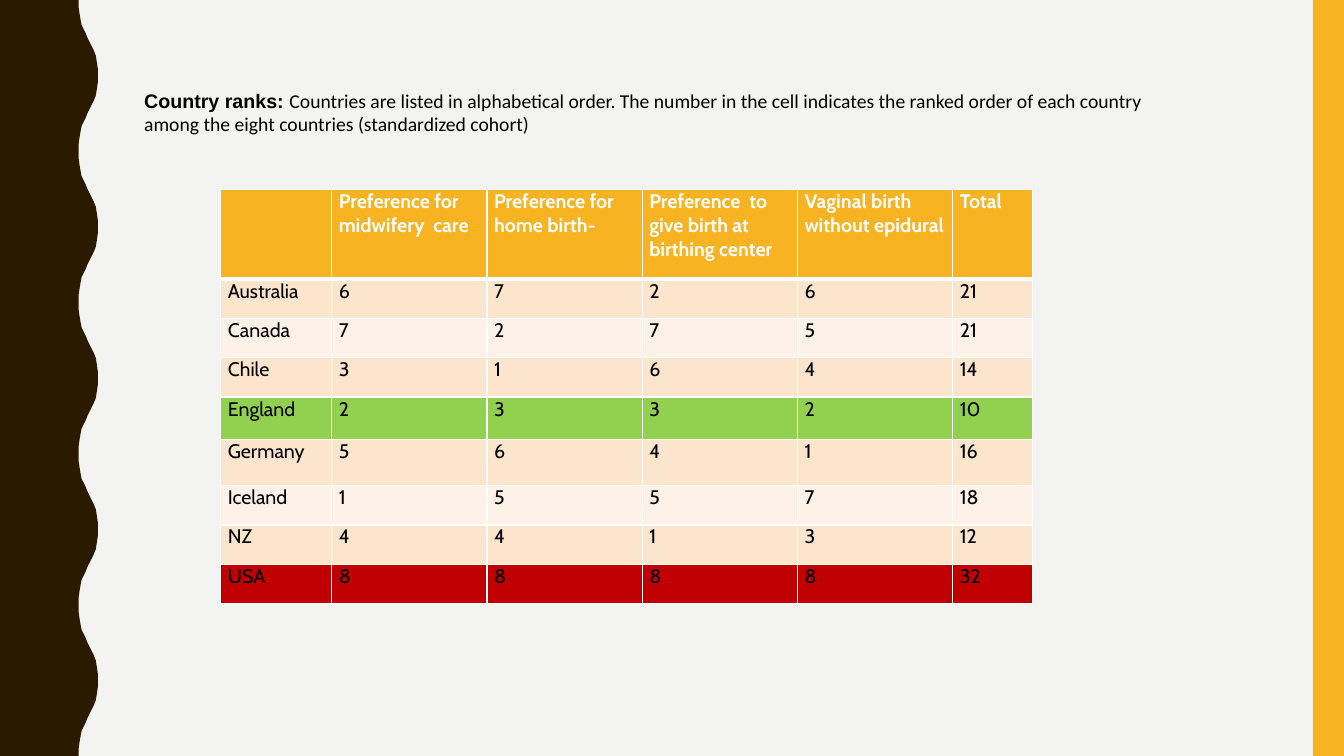
import dataclasses

import pptx
import pptx.dml.color
import pptx.enum.shapes
import pptx.enum.text
import pptx.oxml
import pptx.oxml.ns
import pptx.util

Inches = pptx.util.Inches


@dataclasses.dataclass(frozen=True)
class Theme:
    background: str = "F3F3F2"
    wave: str = "2A1A00"
    accent: str = "F8B323"
    band_dark: str = "FCE5CD"
    band_light: str = "FEF2E8"
    best: str = "92D050"
    worst: str = "C00000"
    text: str = "000000"
    white: str = "FFFFFF"
    text_size: int = 14
    table_font: str = "Cabin"
    lead_font: str = "Arial"
    caption_font: str = "Calibri"


theme = Theme()


def paint(fill, color):
    fill.solid()
    fill.fore_color.rgb = pptx.dml.color.RGBColor.from_string(color)


def add_border(cell, side, width):
    namespace = pptx.oxml.ns.nsdecls("a")
    cell._tc.get_or_add_tcPr().append(pptx.oxml.parse_xml(
        f'<a:ln{side} {namespace} w="{pptx.util.Pt(width)}"><a:solidFill>'
        f'<a:srgbClr val="{theme.white}"/></a:solidFill></a:ln{side}>'))


presentation = pptx.Presentation()
presentation.slide_width = Inches(13.33)
presentation.slide_height = Inches(7.5)
slide = presentation.slides.add_slide(presentation.slide_layouts.get_by_name("Title Only"))
paint(slide.background.fill, theme.background)

wave_period = 1.5
rising_edge = [
    (0.78, 0), (0.78, 0.07), (0.79, 0.14), (0.8, 0.2), (0.81, 0.25),
    (0.83, 0.29), (0.85, 0.33), (0.87, 0.38), (0.89, 0.42), (0.91, 0.46),
    (0.93, 0.5), (0.95, 0.55), (0.96, 0.61), (0.97, 0.68), (0.97, 0.75),
]
falling_edge = [(x, wave_period - y) for x, y in reversed(rising_edge[:-1])]
wave_points = [
    (Inches(x), Inches(y + period * wave_period))
    for period in range(5)
    for x, y in rising_edge + falling_edge
]
wave_builder = slide.shapes.build_freeform(0, 0)
wave_builder.add_line_segments(wave_points + [(0, Inches(7.5))], close=True)
wave = wave_builder.convert_to_shape()
side_bar = slide.shapes.add_shape(
    pptx.enum.shapes.MSO_SHAPE.RECTANGLE, Inches(13.02), 0, Inches(0.31), Inches(7.5))
for shape, color in ((wave, theme.wave), (side_bar, theme.accent)):
    paint(shape.fill, color)
    shape.line.fill.background()
    shape.shadow.inherit = False

headers = [
    "", "Preference for midwifery  care", "Preference for home birth-",
    "Preference  to give birth at birthing center",
    "Vaginal birth without epidural", "Total",
]
ranks = [
    ("Australia", 6, 7, 2, 6, 21),
    ("Canada", 7, 2, 7, 5, 21),
    ("Chile", 3, 1, 6, 4, 14),
    ("England", 2, 3, 3, 2, 10),
    ("Germany", 5, 6, 4, 1, 16),
    ("Iceland", 1, 5, 5, 7, 18),
    ("NZ", 4, 4, 1, 3, 12),
    ("USA", 8, 8, 8, 8, 32),
]
highlights = {"England": theme.best, "USA": theme.worst}
column_widths = [1.1] + [1.54] * 4 + [0.79]
row_heights = [0.89] + [0.39] * 3 + [0.42, 0.46] + [0.39] * 3

rank_table = slide.shapes.add_table(
    len(row_heights), len(column_widths), Inches(2.19), Inches(1.88),
    Inches(sum(column_widths)), Inches(sum(row_heights))).table
for column, width in zip(rank_table.columns, column_widths):
    column.width = Inches(width)
for row, height in zip(rank_table.rows, row_heights):
    row.height = Inches(height)

for row_index, values in enumerate([headers] + ranks):
    is_header = row_index == 0
    band = theme.band_dark if row_index % 2 else theme.band_light
    row_color = theme.accent if is_header else highlights.get(values[0], band)
    for column_index, value in enumerate(values):
        cell = rank_table.cell(row_index, column_index)
        cell.margin_left = cell.margin_right = Inches(0.07)
        cell.margin_top = cell.margin_bottom = 0
        add_border(cell, "L", 1)
        add_border(cell, "R", 1)
        add_border(cell, "T", 3 if row_index == 1 else 1)
        add_border(cell, "B", 3 if is_header else 1)
        paint(cell.fill, row_color)
        cell.text = str(value)
        font = cell.text_frame.paragraphs[0].font
        font.name = theme.table_font
        font.size = pptx.util.Pt(theme.text_size)
        font.bold = is_header
        paint(font.fill, theme.white if is_header else theme.text)

title = slide.shapes.title
title.left, title.top = Inches(1.33), Inches(0.83)
title.width, title.height = Inches(10.16), Inches(0.57)
title_frame = title.text_frame
title_frame.word_wrap = True
title_frame.auto_size = pptx.enum.text.MSO_AUTO_SIZE.NONE
title_frame.vertical_anchor = pptx.enum.text.MSO_ANCHOR.MIDDLE
paragraph = title_frame.paragraphs[0]
paragraph.alignment = pptx.enum.text.PP_ALIGN.LEFT
paragraph.font.size = pptx.util.Pt(theme.text_size)
paint(paragraph.font.fill, theme.text)
caption_parts = [
    ("Country ranks: ", theme.lead_font, True),
    ("Countries are listed in alphabetical order. The number in the cell indicates "
     "the ranked order of each country among the eight countries (standardized cohort)",
     theme.caption_font, False),
]
for text, font_name, bold in caption_parts:
    run = paragraph.add_run()
    run.text = text
    run.font.name = font_name
    run.font.bold = bold

presentation.save("out.pptx")
